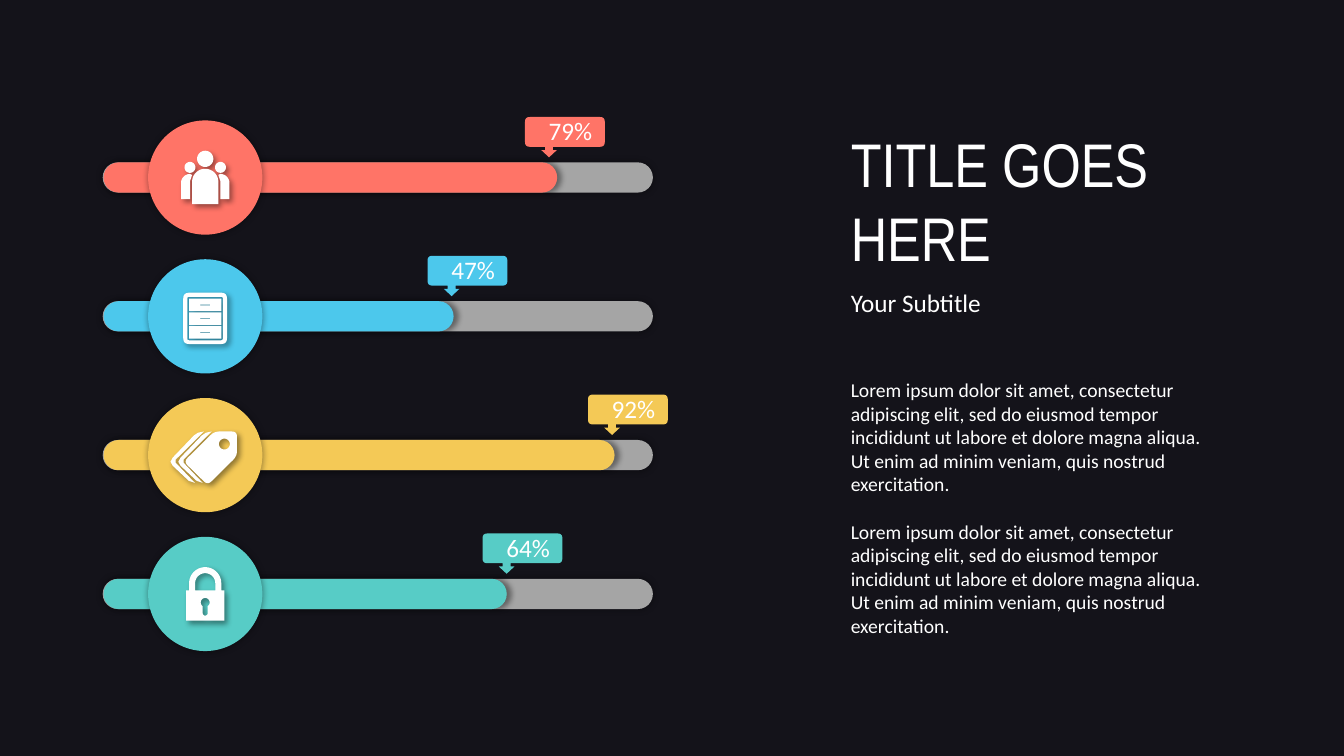
from math import cos, hypot, radians, sin

from lxml.etree import SubElement as Sub
from pptx import Presentation
from pptx.dml.color import RGBColor as RGB
from pptx.enum.shapes import MSO_SHAPE as Kind
from pptx.enum.text import MSO_ANCHOR as Anchor, MSO_AUTO_SIZE as Fit, PP_ALIGN as Align
from pptx.oxml.ns import qn
from pptx.util import Pt

DARK = RGB(0x14, 0x13, 0x1A)
WHITE = RGB(0xFF, 0xFF, 0xFF)
GRAY = RGB(0xA5, 0xA5, 0xA5)
CORAL = RGB(0xFF, 0x74, 0x67)
BLUE = RGB(0x4C, 0xC8, 0xEC)
GOLD = RGB(0xF4, 0xC9, 0x56)
TEAL = RGB(0x57, 0xCC, 0xC6)

# Shadows: blur, distance, angle
GLOW, SIDE, DROP = (5, 0, 0), (4, 3, 0), (4, 3, 45)

LOREM = ("Lorem ipsum dolor sit amet, consectetur adipiscing elit, sed do eiusmod "
         "tempor incididunt ut labore et dolore magna aliqua. Ut enim ad minim "
         "veniam, quis nostrud exercitation.")


# Outlines, in points
def arc(x, y, r, start=0, end=360, steps=32):
    turns = [radians(start + (end - start) * i / steps) for i in range(steps + 1)]
    return [(x + r * cos(t), y + r * sin(t)) for t in turns]


def bend(corners, r, steps=6):
    """Round every corner of a polygon."""
    out = []
    for i, (x, y) in enumerate(corners):
        ends = []
        for u, v in (corners[i - 1], corners[(i + 1) % len(corners)]):
            part = r / hypot(u - x, v - y)
            ends.append((x + (u - x) * part, y + (v - y) * part))
        (ax, ay), (bx, by) = ends
        for t in (k / steps for k in range(steps + 1)):
            a, b, c = (1 - t) ** 2, 2 * t * (1 - t), t * t
            out.append((a * ax + b * x + c * bx, a * ay + b * y + c * by))
    return out


def box(x, y, w, h):
    return [(x, y), (x + w, y), (x + w, y + h), (x, y + h)]


def shift(points, dx):
    return [(x + dx, y) for x, y in points]


# Icons, drawn around the centre of their disc
def people():
    side = [(-10.8, 2.5), (-10.8, 15.5), (-17.3, 15.5),
            *arc(-10.8, 4, 6.5, 180, 270), (-9.4, -1.8)]
    body = [*arc(0, 3.2, 9.4, 180, 360), (9.4, 19.1), (-9.4, 19.1)]
    return [body, side, [(-x, y) for x, y in side], arc(0, -13.3, 5.8),
            arc(-10.9, -7.2, 3.9), arc(10.9, -7.2, 3.9)]


def files():
    parts = [bend(box(-15.7, -16.9, 31.3, 36.7), 4.3),
             bend(box(-12.8, -13.9, 25.4, 31), 1.2)]
    for top in (-12.7, -2.9, 6.9):
        parts += [box(-11.5, top, 23, 9), box(-3.6, top + 4.3, 7.2, 0.6)]
    return parts


def labels():
    front = bend([(22.7, -16.9), (6.5, -16.9), (-15.3, 4.7), (1.8, 21.4), (22.7, 0.7)], 3.8)
    back = [(-15.5, 5.4), (-1.8, 19.8), (-6.1, 18.4), (-17.6, 7.6), (-19.2, 4.7),
            (-17.6, 1.8), (-2.5, -14), (0.5, -16), (4.7, -16.9), (-15.5, 3.2)]
    return [front, arc(13.7, -7.9, 3.9), back, shift(back, -5.6)]


def lock():
    body = [(-13.6, -2.5), (-11.5, -2.5), *arc(0, -7.6, 11.5, 180, 360),
            (11.5, -2.5), (13.6, -2.5), (13.6, 19.1), (-13.6, 19.1)]
    gap = [(-7.2, -2.5), *arc(0, -7.6, 7.2, 180, 360), (7.2, -2.5)]
    key = [*arc(0, 6.1, 3.2, 125, 415), *arc(0, 13.7, 1.8, 0, 180)]
    return [body, gap, key]


class Deck:
    def __init__(self):
        self.file = Presentation()
        self.file.slide_width, self.file.slide_height = Pt(960), Pt(540)
        self.slide = self.file.slides.add_slide(self.file.slide_layouts[1])
        self.slide.background.fill.solid()
        self.slide.background.fill.fore_color.rgb = DARK

    def paint(self, shape, color, glow=None):
        shape.fill.solid()
        shape.fill.fore_color.rgb = color
        shape.line.fill.background()
        shape.shadow.inherit = False
        if glow:
            blur, dist, turn = glow
            effects = shape.element.spPr.find(qn("a:effectLst"))
            cast = Sub(effects, qn("a:outerShdw"), blurRad=str(Pt(blur)),
                       dist=str(Pt(dist)), dir=str(turn * 60000), rotWithShape="0")
            tone = Sub(cast, qn("a:srgbClr"), val="000000")
            Sub(tone, qn("a:alpha"), val="40000")

    def bar(self, x, y, w, h, color, glow):
        shape = self.slide.shapes.add_shape(Kind.ROUNDED_RECTANGLE, Pt(x), Pt(y), Pt(w), Pt(h))
        shape.adjustments[0] = 0.5
        self.paint(shape, color, glow)

    def disc(self, x, y, r, color):
        shape = self.slide.shapes.add_shape(Kind.OVAL, Pt(x - r), Pt(y - r), Pt(2 * r), Pt(2 * r))
        self.paint(shape, color, GLOW)

    def draw(self, parts, x, y, color, glow=None, home=None):
        pen = None
        for part in parts:
            first, *rest = [(Pt(u), Pt(v)) for u, v in part]
            if pen is None:
                pen = (home or self.slide).shapes.build_freeform(*first)
            else:
                pen.move_to(*first)
            pen.add_line_segments(rest, close=True)
        self.paint(pen.convert_to_shape(Pt(x), Pt(y)), color, glow)

    def tag(self, x, y, color, text):
        group = self.slide.shapes.add_group_shape()
        flag = bend(box(0, 0, 57, 21.3), 3.5)
        stem = [(14.4, 21.3), (14.4, 23.6), (11.6, 23.6), (17.2, 28.8),
                (22.8, 23.6), (20, 23.6), (20, 21.3)]
        self.draw([flag, stem], x, y, color, home=group)
        note = group.shapes.add_textbox(Pt(x + 9.9), Pt(y - 4.6), Pt(53.3), Pt(29))
        note.text_frame.word_wrap = True
        self.say(note.text_frame.paragraphs[0], text, 18)

    def say(self, para, text, size, face="Calibri", gap=0):
        para.alignment = Align.LEFT
        para.space_before = Pt(gap)
        run = para.add_run()
        run.text = text
        font = run.font
        font.size, font.name, font.color.rgb = Pt(size), face, WHITE

    def place(self, shape, x, y, w, h):
        shape.left, shape.top, shape.width, shape.height = Pt(x), Pt(y), Pt(w), Pt(h)
        frame = shape.text_frame
        frame.word_wrap, frame.auto_size = True, Fit.NONE
        frame.vertical_anchor = Anchor.TOP
        return frame

    def title(self, text, under):
        frame = self.place(self.slide.shapes.title, 600.5, 86.4, 295, 140)
        self.say(frame.paragraphs[0], text, 44, "Arial Narrow")
        self.say(frame.add_paragraph(), under, 18, gap=9.8)

    def body(self, texts):
        frame = self.place(self.slide.placeholders[1], 600.5, 266.4, 281, 194)
        for i, text in enumerate(texts):
            para = frame.add_paragraph() if i else frame.paragraphs[0]
            props = para._p.get_or_add_pPr()
            props.set("marL", "0")
            props.set("indent", "0")
            Sub(props, qn("a:buNone"))
            self.say(para, text, 14, gap=17 if i else 0)


def main():
    deck = Deck()

    # Text column
    deck.title("TITLE GOES HERE", "Your Subtitle")
    deck.body([LOREM, LOREM])

    # Progress rows: colour, fill width, tag left, label, icon
    rows = [(CORAL, 324, 375, "79%", people), (BLUE, 250, 305.4, "47%", files),
            (GOLD, 365, 420, "92%", labels), (TEAL, 288, 344.7, "64%", lock)]
    for i, (color, width, left, text, icon) in enumerate(rows):
        top = 116 + 99.15 * i
        mid = top + 10.8
        deck.bar(73.4, top, 393, 21.6, GRAY, GLOW)
        deck.bar(74, top, width, 21.6, color, SIDE)
        deck.disc(146.6, mid, 40.8, color)
        deck.tag(left, top - 32.4, color, text)
        deck.draw(icon(), 146.6, mid, WHITE, DROP)

    deck.file.save("out.pptx")


if __name__ == "__main__":
    main()
